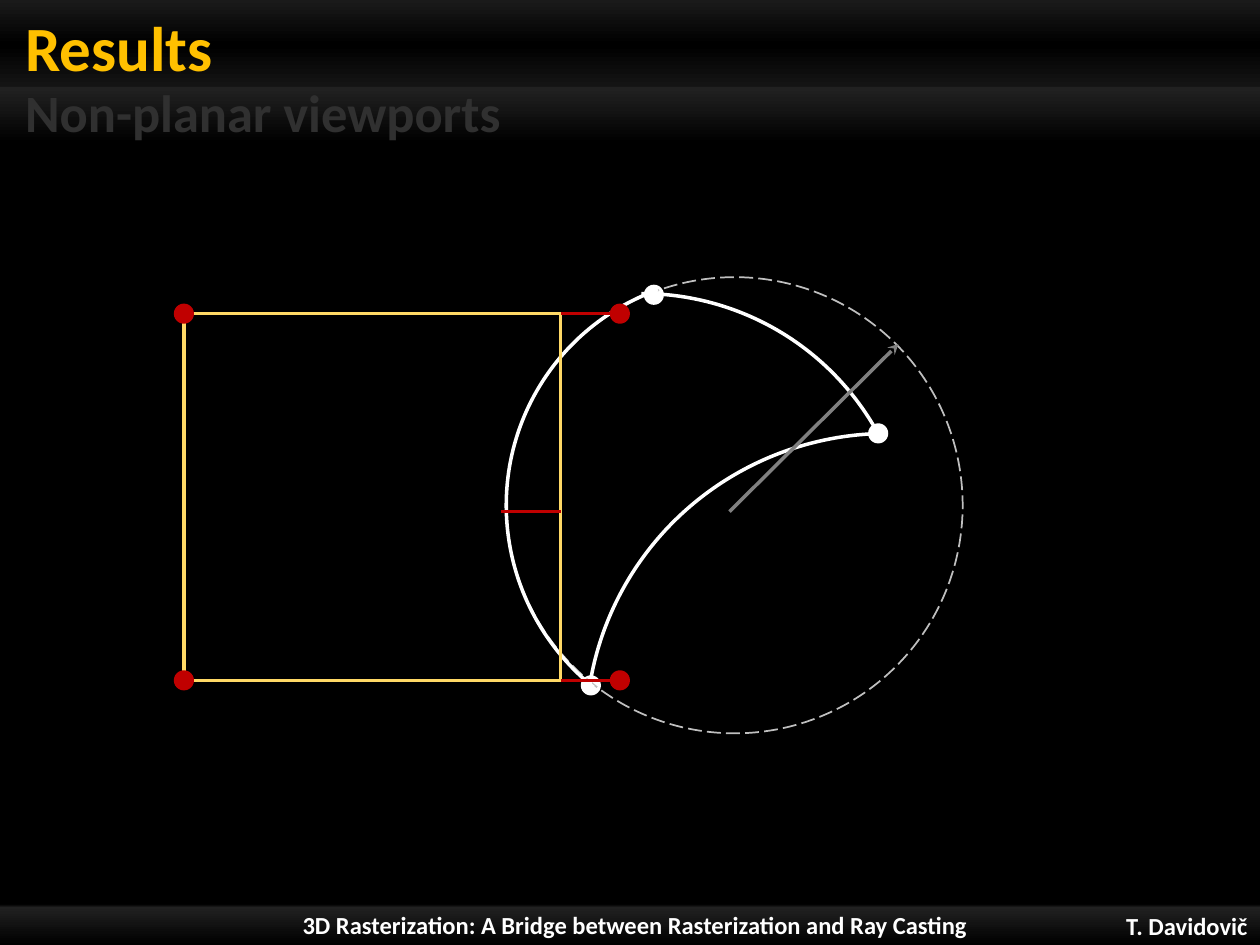
from lxml import etree
from pptx import Presentation
from pptx import util as u
from pptx.dml.color import RGBColor
from pptx.enum import dml, shapes, text
from pptx.oxml import parse_xml
from pptx.oxml.ns import nsdecls, qn

WIDTH, HEIGHT = 10, 7.5
WHITE, YELLOW, RED, GREY = "FFFFFF", "FFD966", "C00000", "808080"
DOT = 0.16

# Bands: top, height, gradient stops (percent, colour)
BANDS = [
    (7.16, 0.34, [(5, "000000"), (10, "141414"), (11, "212121"), (100, "000000")]),
    (0, 1.14, [(0, "1A1A1A"), (31, "000000"), (60, "141414"), (61, "212121"),
               (100, "000000")]),
]

# Texts: wording, box, size, colour, alignment, anchor, insets
LEFT, CENTER, RIGHT = text.PP_ALIGN.LEFT, text.PP_ALIGN.CENTER, text.PP_ALIGN.RIGHT
MIDDLE, BOTTOM = text.MSO_ANCHOR.MIDDLE, text.MSO_ANCHOR.BOTTOM
HEAD_INSETS, FOOT_INSETS = (0.2, 0, 0.1, 0), (0.1, 0, 0.1, 0)
TEXTS = [
    ("T. Davidovič", (8.15, 7.19, 1.85, 0.31), 14, WHITE, RIGHT, MIDDLE, FOOT_INSETS),
    ("3D Rasterization: A Bridge between Rasterization and Ray Casting",
     (1.4, 7.17, 7.28, 0.34), 14, WHITE, CENTER, MIDDLE, FOOT_INSETS),
    ("Results", (0, 0, 8.23, 0.67), 36, "FFC000", LEFT, BOTTOM, HEAD_INSETS),
    ("Non-planar viewports", (0, 0.65, 6.71, 0.47), 30, "303030", LEFT, MIDDLE,
     HEAD_INSETS),
]

# Curved viewport: corner centres, and arcs as box, rotation, start and end degrees
CURVED_CORNERS = [(4.69, 5.44), (6.97, 3.44), (5.19, 2.34)]
CIRCLE = (4.02, 2.2, 3.62, 3.62)
ARCS = [
    ((2.95, 2.33, 4.28, 4.26), 0, 270, 331.49),
    ((4.01, 2.2, 3.7, 3.66), 219.1, 269.84, 30.64),
    ((4.67, 3.42, 4.76, 4.8), 278.8, 270, 350.25),
]

# Planar viewport: frame edges and the red offsets to its right
FRAME_LEFT, FRAME_RIGHT, FRAME_TOP, FRAME_BOTTOM = 1.46, 4.45, 2.49, 5.4
OFFSET_RIGHT, MIDDLE_Y = 4.92, 4.06
FRAME_LINES = [
    (FRAME_LEFT, FRAME_TOP, FRAME_LEFT, FRAME_BOTTOM),
    (FRAME_LEFT, FRAME_TOP, FRAME_RIGHT, FRAME_TOP),
    (FRAME_LEFT, FRAME_BOTTOM, FRAME_RIGHT, FRAME_BOTTOM),
    (FRAME_RIGHT, FRAME_TOP, FRAME_RIGHT, FRAME_BOTTOM),
]
OFFSET_LINES = [
    (FRAME_RIGHT, MIDDLE_Y, 3.98, MIDDLE_Y),
    (OFFSET_RIGHT, FRAME_TOP, FRAME_RIGHT, FRAME_TOP),
    (OFFSET_RIGHT, FRAME_BOTTOM, FRAME_RIGHT, FRAME_BOTTOM),
]
RADIUS = (5.79, MIDDLE_Y, 7.13, 2.73)


def rgb(color):
    return RGBColor.from_string(color)


def inches(values):
    return [u.Inches(value) for value in values]


def style_line(line, color, width=2):
    line.color.rgb = rgb(color)
    line.width = u.Pt(width)


def add_shape(slide, kind, box, fill=None):
    shape = slide.shapes.add_shape(kind, *inches(box))
    shape.shadow.inherit = False
    if fill:
        shape.fill.solid()
        shape.fill.fore_color.rgb = rgb(fill)
    else:
        shape.fill.background()
    shape.line.fill.background()
    return shape


def add_band(slide, top, height, stops):
    band = add_shape(slide, shapes.MSO_SHAPE.RECTANGLE, (0, top, WIDTH, height))
    stop_xml = "".join(
        f'<a:gs pos="{percent * 1000}"><a:srgbClr val="{color}"/></a:gs>'
        for percent, color in stops)
    gradient = parse_xml(
        f'<a:gradFill {nsdecls("a")} rotWithShape="1"><a:gsLst>{stop_xml}</a:gsLst>'
        '<a:lin ang="5400000" scaled="0"/></a:gradFill>')
    properties = band._element.spPr
    properties.replace(properties.find(qn("a:noFill")), gradient)


def add_text(slide, wording, box, size, color, alignment, anchor, insets):
    frame = slide.shapes.add_textbox(*inches(box)).text_frame
    frame.word_wrap = True
    frame.vertical_anchor = anchor
    (frame.margin_left, frame.margin_top,
     frame.margin_right, frame.margin_bottom) = inches(insets)
    frame.text = wording
    paragraph = frame.paragraphs[0]
    paragraph.alignment = alignment
    font = paragraph.runs[0].font
    font.name, font.size, font.bold = "Calibri", u.Pt(size), True
    font.color.rgb = rgb(color)


def add_dot(slide, x, y, color):
    add_shape(slide, shapes.MSO_SHAPE.OVAL, (x - DOT / 2, y - DOT / 2, DOT, DOT), color)


def add_arc(slide, box, rotation, start, end):
    arc = add_shape(slide, shapes.MSO_SHAPE.ARC, box)
    arc.rotation = rotation
    for index, degrees in enumerate((start, end)):
        arc.adjustments[index] = degrees * 0.6  # 60000ths of a degree / 100000
    style_line(arc.line, WHITE)


def add_line(slide, ends, color, arrow=False):
    connector = slide.shapes.add_connector(shapes.MSO_CONNECTOR.STRAIGHT, *inches(ends))
    style_line(connector.line, color)
    if arrow:
        etree.SubElement(connector.line._get_or_add_ln(), qn("a:tailEnd"), type="stealth")
    etree.SubElement(connector._element.spPr, qn("a:effectLst"))


def main():
    presentation = Presentation()
    presentation.slide_width, presentation.slide_height = inches((WIDTH, HEIGHT))
    slide = presentation.slides.add_slide(presentation.slide_layouts[6])
    slide.background.fill.solid()
    slide.background.fill.fore_color.rgb = rgb("000000")

    # Header, footer and their texts
    for band in BANDS:
        add_band(slide, *band)
    for item in TEXTS:
        add_text(slide, *item)

    # Curved viewport on its circle
    for x, y in CURVED_CORNERS:
        add_dot(slide, x, y, WHITE)
    circle = add_shape(slide, shapes.MSO_SHAPE.OVAL, CIRCLE)
    style_line(circle.line, "BFBFBF", 1)
    circle.line.dash_style = dml.MSO_LINE.LONG_DASH
    for arc in ARCS:
        add_arc(slide, *arc)

    # Planar viewport with its offsets
    for ends in FRAME_LINES:
        add_line(slide, ends, YELLOW)
    for x in (FRAME_LEFT, OFFSET_RIGHT):
        for y in (FRAME_TOP, FRAME_BOTTOM):
            add_dot(slide, x, y, RED)
    add_line(slide, RADIUS, GREY, arrow=True)
    for ends in OFFSET_LINES:
        add_line(slide, ends, RED)

    presentation.save("out.pptx")


if __name__ == "__main__":
    main()
